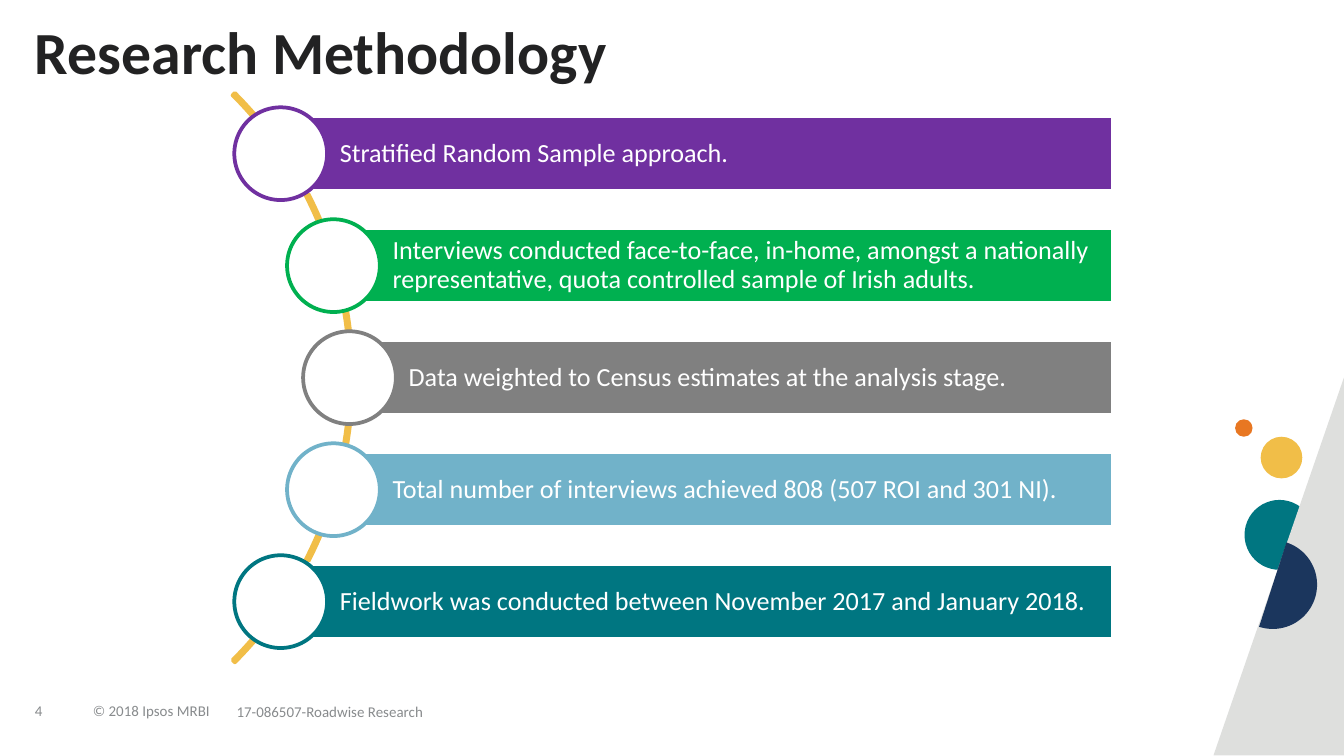
import math
from pptx import Presentation
from pptx.dml.color import RGBColor
from pptx.enum import shapes, text
from pptx.util import Inches, Pt

COLORS = {
    "purple": "7030A0", "green": "00B050", "gray": "808080", "sky": "71B2C9",
    "teal": "007681", "yellow": "F1BE48", "orange": "E87722", "navy": "1B365D",
    "silver": "DEDFDD", "white": "FFFFFF", "title": "222223", "footer": "888B8D",
}
TITLE = "Research Methodology"
STEPS = [
    ("Stratified Random Sample approach.", "purple"),
    ("Interviews conducted face-to-face, in-home, amongst a nationally "
     "representative, quota controlled sample of Irish adults.", "green"),
    ("Data weighted to Census estimates at the analysis stage.", "gray"),
    ("Total number of interviews achieved 808 (507 ROI and 301 NI).", "sky"),
    ("Fieldwork was conducted between November 2017 and January 2018.", "teal"),
]
FOOTERS = [
    ("4", (0.26, 5.17, 0.34, 0.26)),
    ("© 2018 Ipsos MRBI", (0.69, 5.21, 0.92, 0.18)),
    ("17-086507-Roadwise Research", (1.76, 5.15, 2.72, 0.31)),
]
DOTS = [
    ("teal", (9.26, 3.72, 0.52, 0.52)),
    ("yellow", (9.38, 3.25, 0.31, 0.31)),
    ("orange", (9.19, 3.12, 0.13, 0.13)),
]
SLIDE_WIDTH = 10
SLIDE_HEIGHT = SLIDE_WIDTH * 9 / 16
ARC_X, ARC_Y, ARC_RADIUS, ARC_SIZE = -0.37, 2.81, 2.97, 5.99
PITCH, BAR_HEIGHT, BAR_RIGHT, CIRCLE = 5 / 6, 0.56, 8.28, 0.69
SEGMENT_X, SEGMENT_Y, SEGMENT_RADIUS = 9.47, 4.35, 0.33

presentation = Presentation()
presentation.slide_width = Inches(SLIDE_WIDTH)
presentation.slide_height = Inches(SLIDE_HEIGHT)
slide = presentation.slides.add_slide(presentation.slide_layouts[5])


def rgb(name):
    return RGBColor.from_string(COLORS[name])


def paint(shape, fill=None, line=None):
    shape.shadow.inherit = False
    if fill:
        shape.fill.solid()
        shape.fill.fore_color.rgb = rgb(fill)
    else:
        shape.fill.background()
    if line:
        shape.line.color.rgb = rgb(line)
        shape.line.width = Pt(2)
    else:
        shape.line.fill.background()


def add_shape(kind, box, fill=None, line=None):
    shape = slide.shapes.add_shape(kind, *map(Inches, box))
    paint(shape, fill, line)
    return shape


def write(shape, words, color, size, bold=False, insets=(0, 0, 0, 0), wrap=True,
          anchor=text.MSO_ANCHOR.MIDDLE, spacing=0.9):
    frame = shape.text_frame
    frame.text = words
    left, top, right, bottom = map(Inches, insets)
    frame_format = {
        "margin_left": left, "margin_top": top, "margin_right": right,
        "margin_bottom": bottom, "word_wrap": wrap, "vertical_anchor": anchor,
    }
    for name, value in frame_format.items():
        setattr(frame, name, value)
    paragraph = frame.paragraphs[0]
    paragraph_format = {"alignment": text.PP_ALIGN.LEFT, "line_spacing": spacing,
                        "space_before": Pt(0)}
    for name, value in paragraph_format.items():
        setattr(paragraph, name, value)
    font = paragraph.runs[0].font
    for name, value in {"name": "Calibri", "size": Pt(size), "bold": bold}.items():
        setattr(font, name, value)
    font.color.rgb = rgb(color)


for words, box in FOOTERS:
    footer = slide.shapes.add_textbox(*map(Inches, box))
    write(footer, words, "footer", 8, wrap=False, spacing=0.85)

for color, box in DOTS:
    add_shape(shapes.MSO_SHAPE.OVAL, box, color)

triangle = add_shape(shapes.MSO_SHAPE.RIGHT_TRIANGLE, (9.03, 2.81, 0.97, 2.81), "silver")
triangle._element.spPr.xfrm.set("flipH", "1")

points = [
    (Inches(SEGMENT_X + SEGMENT_RADIUS * math.cos(math.radians(angle))),
     Inches(SEGMENT_Y + SEGMENT_RADIUS * math.sin(math.radians(angle))))
    for angle in range(-72, 109, 4)
]
builder = slide.shapes.build_freeform(*points[0])
builder.add_line_segments(points[1:], close=True)
paint(builder.convert_to_shape(), "navy")

title = slide.shapes.title
title.left, title.top, title.width, title.height = map(Inches, (0.26, 0.17, 9.46, 0.5))
write(title, TITLE, "title", 32, bold=True, anchor=text.MSO_ANCHOR.TOP)
title.text_frame.auto_size = text.MSO_AUTO_SIZE.SHAPE_TO_FIT_TEXT

arc = add_shape(
    shapes.MSO_SHAPE.BLOCK_ARC,
    (ARC_X - ARC_SIZE / 2, ARC_Y - ARC_SIZE / 2, ARC_SIZE, ARC_SIZE), line="yellow")
for index, value in enumerate((189, 27, 0.004)):
    arc.adjustments[index] = value

for index, (words, color) in enumerate(STEPS):
    offset = (index - (len(STEPS) - 1) / 2) * PITCH
    x = ARC_X + math.sqrt(ARC_RADIUS ** 2 - offset ** 2)
    y = ARC_Y + offset
    bar = add_shape(shapes.MSO_SHAPE.RECTANGLE,
                    (x, y - BAR_HEIGHT / 2, BAR_RIGHT - x, BAR_HEIGHT), color, "white")
    write(bar, words, "white", 14, insets=(0.44, 0.04, 0.04, 0.04))
    add_shape(shapes.MSO_SHAPE.OVAL,
              (x - CIRCLE / 2, y - CIRCLE / 2, CIRCLE, CIRCLE), "white", color)

presentation.save("out.pptx")
